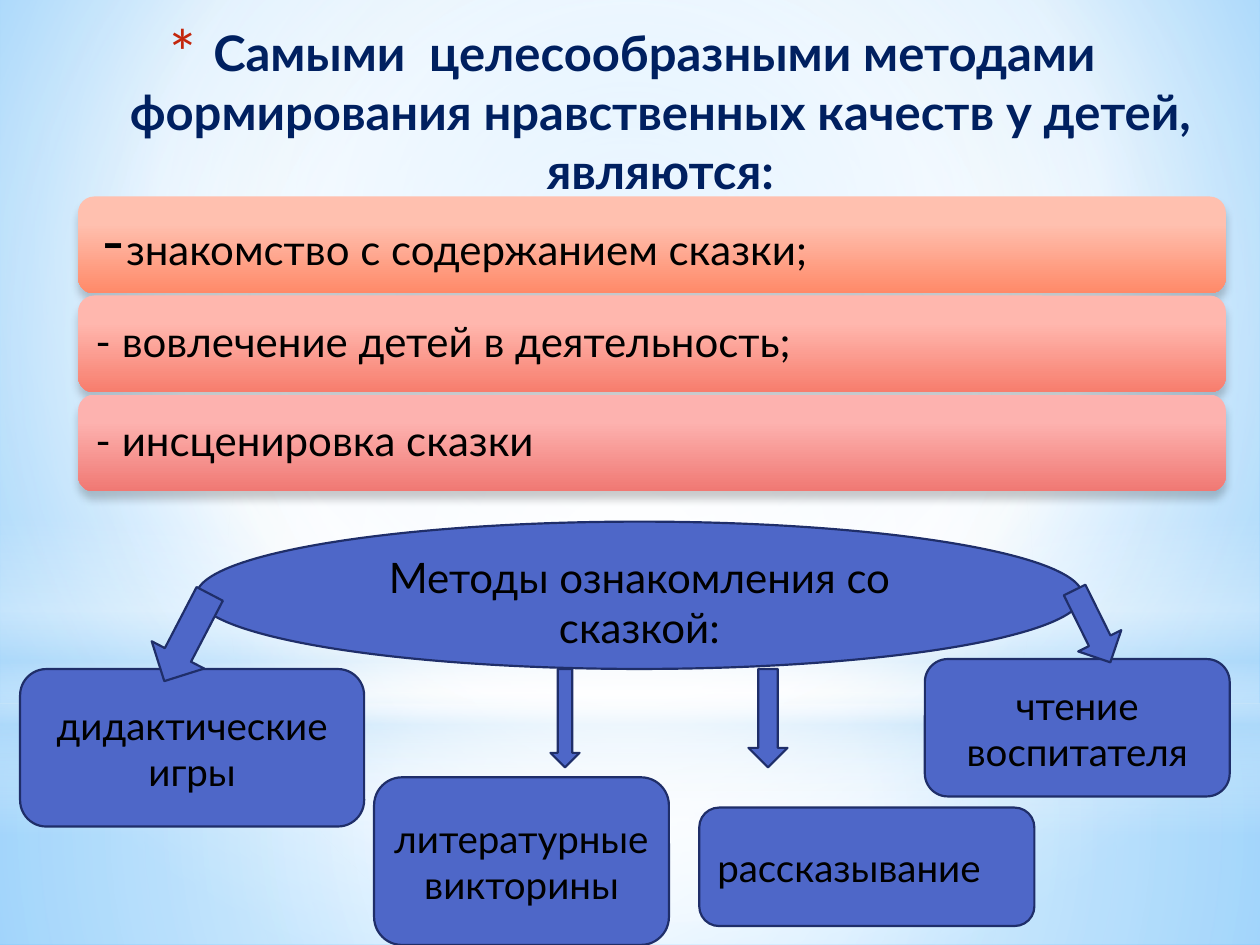
from lxml.etree import SubElement
from pptx import Presentation
from pptx.dml.color import RGBColor
from pptx.enum.shapes import MSO_SHAPE
from pptx.enum.text import MSO_ANCHOR, PP_ALIGN
from pptx.oxml import parse_xml
from pptx.oxml.ns import nsdecls, qn
from pptx.util import Pt

FONT = "Lato"
COLORS = {
    "black": "000000", "white": "FFFFFF", "navy": "002060", "red": "C3260C",
    "blue": "4E67C8", "edge": "1F2E69", "sky": "9ED5FF", "deep": "5BB9FF",
    "pale": "B4DCFA", "peach": "FFC0AF", "orange": "FF8968", "rose": "FFB7AE",
    "coral": "F77D6D", "pink": "FDB2AF", "salmon": "F07873",
}
MID = (50, 50, 50, 50)
BACK = [(0, "sky", 100), (60, "white", 100), (100, "deep", 100)]
LAYERS = [
    (MSO_SHAPE.RECTANGLE, (0, 401.8, 720, 138.2), MID,
     [(0, "white", 91), (37, "white", 76), (100, "pale", 79)]),
    (MSO_SHAPE.RECTANGLE, (0, 0, 720, 401.8), MID,
     [(0, "white", 89), (48, "white", 62), (100, "pale", 79)]),
    (MSO_SHAPE.RECTANGLE, (0, 296.6, 720, 180), None,
     [(0, "white", 0), (29, "white", 30), (45, "pale", 40),
      (55, "white", 26), (65, "pale", 60), (100, "white", 0)]),
    (MSO_SHAPE.OVAL, (0, 126, 720, 401.8), MID,
     [(0, "white", 100), (56, "white", 0)]),
]
TITLE = "Самыми  целесообразными методами  формирования нравственных качеств у детей, являются:"
BARS = [
    ([("-", 37), ("знакомство с содержанием сказки;", 24)], 10.8, "peach", "orange"),
    ([("- вовлечение детей в деятельность;", 24)], 7.2, "rose", "coral"),
    ([("- инсценировка сказки", 24)], 7.2, "pink", "salmon"),
]
HUB = ("Методы ознакомления со сказкой:", (112.3, 298.1, 506.2, 84.2))
BOXES = [
    ("рассказывание", (399.6, 461.5, 191.5, 67.7), PP_ALIGN.LEFT, 7.2),
    ("дидактические игры", (11.5, 382.3, 196.6, 90), PP_ALIGN.CENTER, 7.2),
    ("чтение воспитателя", (528.5, 376.6, 174.2, 78.5), PP_ALIGN.CENTER, 7.2),
    ("литературные викторины", (213.8, 444.2, 168.5, 95.8), PP_ALIGN.CENTER, 3.6),
]
ARROWS = [
    ((314.6, 382.3, 16.6, 56.2), 0),
    ((610.6, 334.8, 27.4, 46.1), 333.7),
    ((90, 336.2, 33.8, 56.2), 27.5),
    ((427.7, 382.3, 22.3, 56.2), 0),
]


def rgb(name):
    return RGBColor.from_string(COLORS[name])


def blend(owner, root, stops, focus=None):
    owner.fill.gradient()
    marks = "".join(
        f'<a:gs pos="{pos * 1000}"><a:srgbClr val="{COLORS[tint]}">'
        f'<a:alpha val="{alpha * 1000}"/></a:srgbClr></a:gs>'
        for pos, tint, alpha in stops)
    if focus:
        sides = " ".join(f'{side}="{val * 1000}"' for side, val in zip("ltrb", focus))
        course = f'<a:path path="circle"><a:fillToRect {sides}/></a:path>'
    else:
        course = '<a:lin ang="5400000" scaled="0"/>'
    old = root.find(".//" + qn("a:gradFill"))
    old.getparent().replace(old, parse_xml(
        f'<a:gradFill {nsdecls("a")} rotWithShape="1">'
        f'<a:gsLst>{marks}</a:gsLst>{course}</a:gradFill>'))


def draw(kind, area):
    shape = slide.shapes.add_shape(kind, *map(Pt, area))
    shape.shadow.inherit = False
    shape.line.fill.background()
    return shape


def solid(kind, area):
    shape = draw(kind, area)
    shape.fill.solid()
    shape.fill.fore_color.rgb = rgb("blue")
    shape.line.color.rgb = rgb("edge")
    shape.line.width = Pt(1.25)
    return shape


def write(shape, runs, align=PP_ALIGN.LEFT, anchor=MSO_ANCHOR.MIDDLE,
          tint="black", bold=False, side=7.2):
    frame = shape.text_frame
    frame.word_wrap = True
    frame.vertical_anchor = anchor
    frame.margin_left = frame.margin_right = Pt(side)
    para = frame.paragraphs[0]
    para.alignment = align
    for text, size in runs:
        run = para.add_run()
        run.text = text
        run.font.name = FONT
        run.font.size = Pt(size)
        run.font.bold = bold
        run.font.color.rgb = rgb(tint)
    return para


def shade(shape):
    effect = shape.element.spPr.find(qn("a:effectLst"))
    cast = SubElement(effect, qn("a:outerShdw"), blurRad=str(Pt(5)),
                      dist=str(Pt(4)), dir="5400000", rotWithShape="0")
    tone = SubElement(cast, qn("a:srgbClr"), val=COLORS["black"])
    SubElement(tone, qn("a:alpha"), val="20000")


def bullet(para):
    props = para._p.get_or_add_pPr()
    props.set("marL", str(Pt(25.2)))
    props.set("indent", str(-Pt(25.2)))
    tone = SubElement(props, qn("a:buClr"))
    SubElement(tone, qn("a:srgbClr"), val=COLORS["red"])
    SubElement(props, qn("a:buSzPct"), val="128000")
    SubElement(props, qn("a:buFont"), typeface=FONT)
    SubElement(props, qn("a:buChar"), char="*")


deck = Presentation()
deck.slide_width, deck.slide_height = Pt(720), Pt(540)
slide = deck.slides.add_slide(deck.slide_layouts[6])
blend(slide.background, slide.element, BACK, (20, 10, 20, 60))

for kind, area, focus, stops in LAYERS:
    layer = draw(kind, area)
    blend(layer, layer.element, stops, focus)

head = slide.shapes.add_textbox(*map(Pt, (36.7, 9.4, 655.9, 90)))
bullet(write(head, [(TITLE, 28)], PP_ALIGN.CENTER, MSO_ANCHOR.TOP, "navy", True))

for row, (runs, inset, light, dark) in enumerate(BARS):
    top = 112.3 + row * 56.6
    bar = draw(MSO_SHAPE.ROUNDED_RECTANGLE, (44.6, top, 655.9, 55.4))
    blend(bar, bar.element, [(28, light, 100), (100, dark, 100)])
    shade(bar)
    label = slide.shapes.add_textbox(*map(Pt, (47.5, top + 2.7, 650.2, 50)))
    write(label, runs, side=inset).line_spacing = 0.9
    frame = label.text_frame
    frame.margin_top = frame.margin_bottom = Pt(inset)

text, area = HUB
hub = solid(MSO_SHAPE.OVAL, area)
write(hub, [(text, 24)], PP_ALIGN.CENTER, MSO_ANCHOR.TOP)
hub.text_frame.margin_top, hub.text_frame.margin_bottom = Pt(4.8), Pt(0)

for text, area, align, side in BOXES:
    write(solid(MSO_SHAPE.ROUNDED_RECTANGLE, area), [(text, 22)], align, side=side)

for area, turn in ARROWS:
    solid(MSO_SHAPE.DOWN_ARROW, area).rotation = turn

deck.save("out.pptx")
